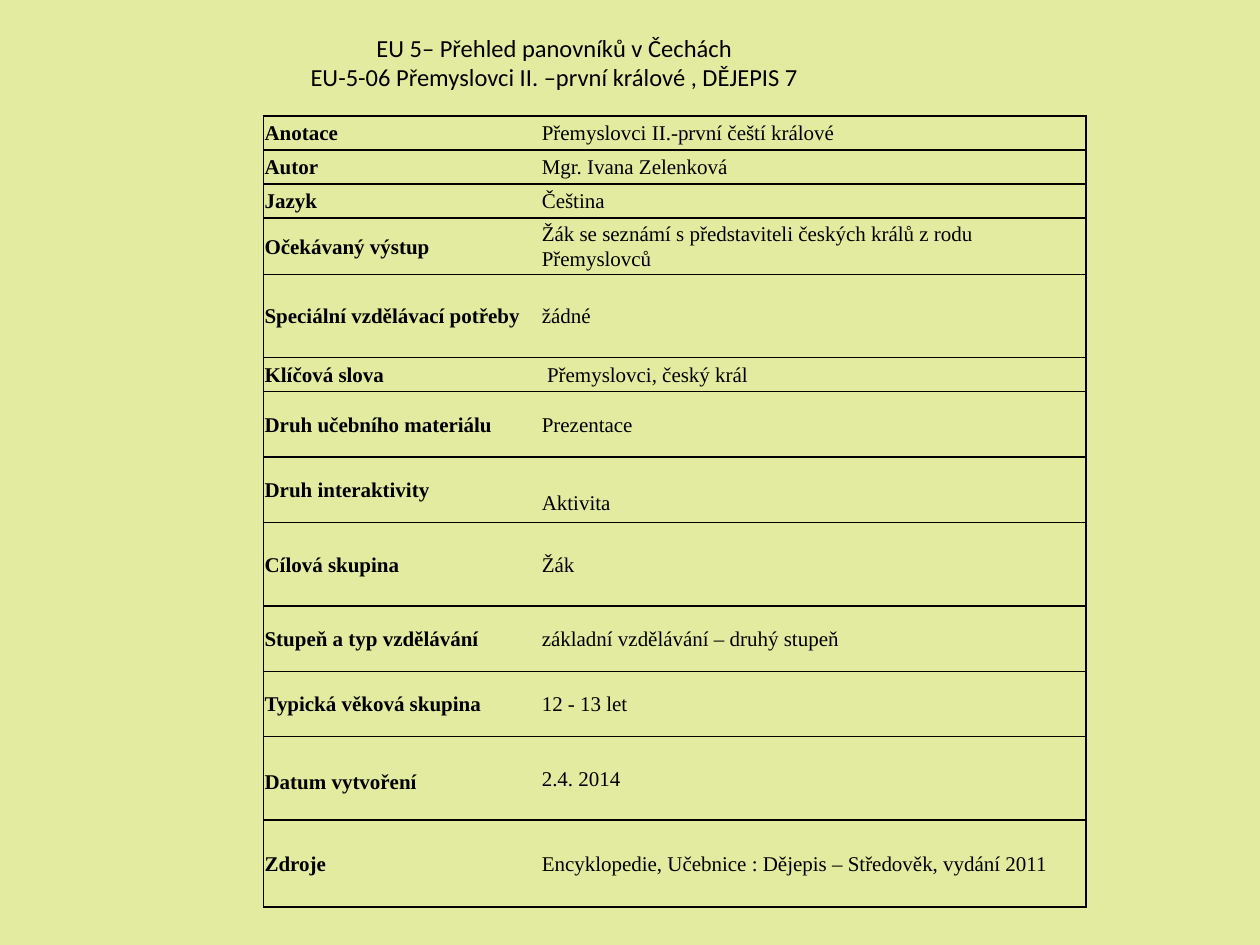
"""Build the lesson description slide with its title and annotation table."""
from lxml import etree
from pptx import Presentation
from pptx.dml.color import RGBColor
from pptx.enum.text import MSO_ANCHOR, PP_ALIGN
from pptx.oxml.ns import qn
from pptx.util import Inches, Pt

CENTER = PP_ALIGN.CENTER
MIDDLE = MSO_ANCHOR.MIDDLE
BACKGROUND, INK = "E2EBA0", "000000"
TITLE = ["EU 5– Přehled panovníků v Čechách",
         "EU-5-06 Přemyslovci II. –první králové , DĚJEPIS 7"]
DETAILS = [
    ("Anotace", "Přemyslovci II.-první čeští králové", 0.27),
    ("Autor", "Mgr. Ivana Zelenková", 0.27),
    ("Jazyk", "Čeština", 0.27),
    ("Očekávaný výstup",
     "Žák se seznámí s představiteli českých králů z rodu Přemyslovců", 0.45),
    ("Speciální vzdělávací potřeby", "žádné", 0.66),
    ("Klíčová slova", " Přemyslovci, český král", 0.27),
    ("Druh učebního materiálu", "Prezentace", 0.52),
    ("Druh interaktivity", "Aktivita", 0.52),
    ("Cílová skupina", "Žák", 0.66),
    ("Stupeň a typ vzdělávání", "základní vzdělávání – druhý stupeň", 0.52),
    ("Typická věková skupina", "12 - 13 let", 0.52),
    ("Datum vytvoření", "2.4. 2014", 0.66),
    ("Zdroje", "Encyklopedie, Učebnice : Dějepis – Středověk, vydání 2011", 0.69),
]
COLUMN_WIDTHS = [2.2, 4.33]
OUTER_EDGES = ["lnL", "lnR"]
CELL_INSET = 0.01
TOP_INSETS = {"Aktivita": 0.21, "Datum vytvoření": 0.06}


def color(hex_string):
    return RGBColor.from_string(hex_string)


def style_text(paragraph, font_name, size, bold=False):
    for run in paragraph.runs:
        run.font.name = font_name
        run.font.size = Pt(size)
        run.font.bold = bold
        run.font.color.rgb = color(INK)


def add_borders(cell, visible_edges):
    properties = cell._tc.get_or_add_tcPr()
    for position, edge in enumerate(["lnL", "lnR", "lnT", "lnB"]):
        line = etree.Element(qn(f"a:{edge}"), w=str(Pt(1)))
        if edge in visible_edges:
            fill = etree.SubElement(line, qn("a:solidFill"))
            etree.SubElement(fill, qn("a:srgbClr"), val=INK)
        else:
            etree.SubElement(line, qn("a:noFill"))
        properties.insert(position, line)


def fill_cell(cell, words, column):
    cell.fill.background()
    cell.vertical_anchor = MIDDLE
    cell.margin_left = cell.margin_right = cell.margin_bottom = Inches(CELL_INSET)
    cell.margin_top = Inches(TOP_INSETS.get(words, CELL_INSET))
    cell.text_frame.text = words
    paragraph = cell.text_frame.paragraphs[0]
    paragraph.line_spacing = 1.07
    style_text(paragraph, "Times New Roman", 12, bold=column == 0)
    add_borders(cell, [OUTER_EDGES[column], "lnT", "lnB"])


def add_title(slide):
    title = slide.shapes.add_textbox(Inches(1.3), Inches(0.21), Inches(6.2), Inches(0.57))
    title.text_frame.word_wrap = True
    title.text_frame.text = "\n".join(TITLE)
    for paragraph in title.text_frame.paragraphs:
        paragraph.alignment = CENTER
        style_text(paragraph, "Calibri", 14)


def add_details(slide):
    heights = [height for _, _, height in DETAILS]
    table = slide.shapes.add_table(
        len(DETAILS), len(COLUMN_WIDTHS), Inches(2.09), Inches(0.92),
        Inches(sum(COLUMN_WIDTHS)), Inches(sum(heights))).table
    table.first_row = table.horz_banding = False
    for column, width in enumerate(COLUMN_WIDTHS):
        table.columns[column].width = Inches(width)
    for row, (label, value, height) in enumerate(DETAILS):
        table.rows[row].height = Inches(height)
        for column, words in enumerate([label, value]):
            fill_cell(table.cell(row, column), words, column)


def main():
    presentation = Presentation()
    presentation.slide_width, presentation.slide_height = Inches(10), Inches(7.5)
    slide = presentation.slides.add_slide(presentation.slide_layouts[6])
    slide.background.fill.solid()
    slide.background.fill.fore_color.rgb = color(BACKGROUND)
    add_title(slide)
    add_details(slide)
    presentation.save("out.pptx")


if __name__ == "__main__":
    main()
